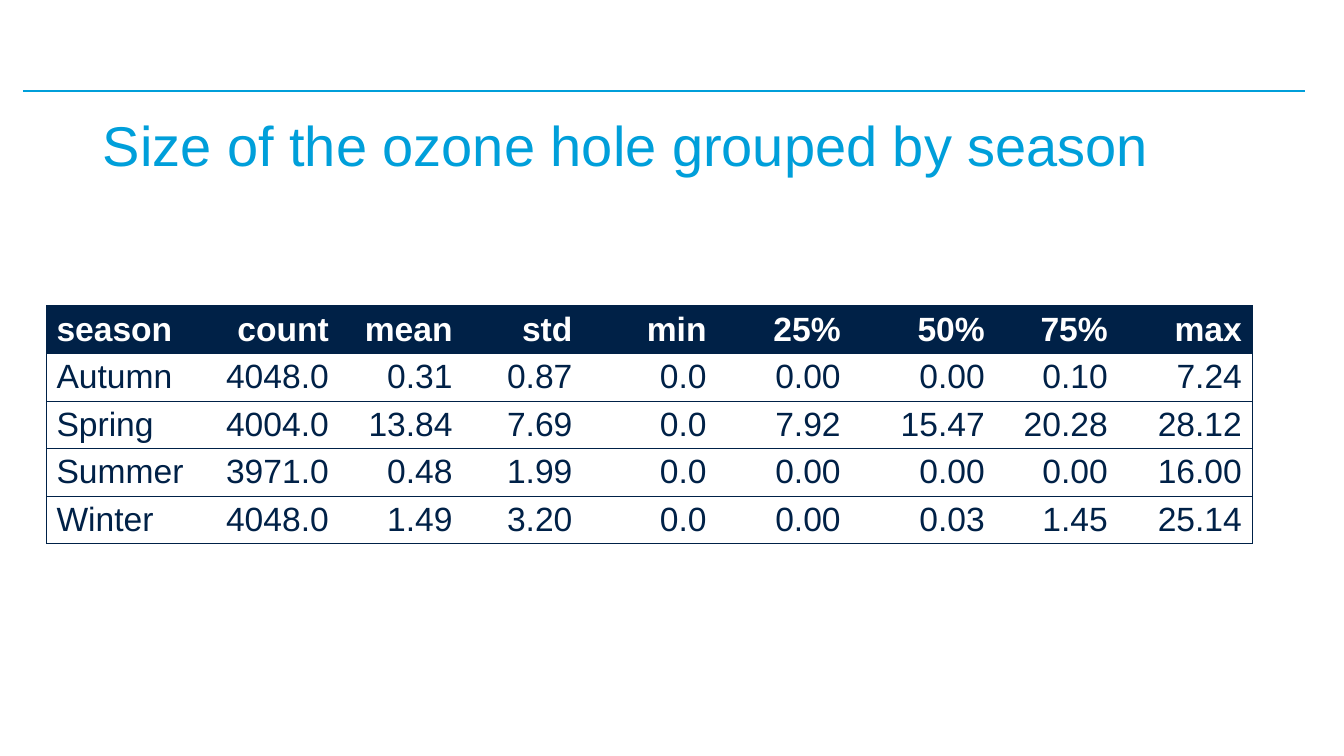
from lxml import etree
from pptx import Presentation
from pptx.dml.color import RGBColor
from pptx.enum import shapes, text
from pptx.oxml import ns
from pptx.util import Cm, Pt

TITLE = "Size of the ozone hole grouped by season"
ROWS = [
    ("season", "count", "mean", "std", "min", "25%", "50%", "75%", "max"),
    ("Autumn", "4048.0", "0.31", "0.87", "0.0", "0.00", "0.00", "0.10", "7.24"),
    ("Spring", "4004.0", "13.84", "7.69", "0.0", "7.92", "15.47", "20.28", "28.12"),
    ("Summer", "3971.0", "0.48", "1.99", "0.0", "0.00", "0.00", "0.00", "16.00"),
    ("Winter", "4048.0", "1.49", "3.20", "0.0", "0.00", "0.03", "1.45", "25.14"),
]
WIDTHS = (3.84, 3.53, 3.12, 3.02, 3.38, 3.38, 3.63, 3.1, 3.38)
HIGH = 1.2
BLUE, NAVY, WHITE = "009FDA", "002147", "FFFFFF"


def color(code):
    return RGBColor.from_string(code)


def write(para, words, size, code, bold=False):
    run = para.add_run()
    run.text = words
    run.font.name = "Arial"
    run.font.size = Pt(size)
    run.font.bold = bold
    run.font.color.rgb = color(code)


def border(cell, side, shown):
    props = cell._tc.get_or_add_tcPr()
    line = etree.SubElement(props, ns.qn("a:ln" + side), w=str(Pt(0.5)))
    if shown:
        fill = etree.SubElement(line, ns.qn("a:solidFill"))
        etree.SubElement(fill, ns.qn("a:srgbClr"), val=NAVY)
    else:
        etree.SubElement(line, ns.qn("a:noFill"))


def add_rule(slide):
    rule = slide.shapes.add_connector(
        shapes.MSO_CONNECTOR.STRAIGHT, Cm(0.58), Cm(2.29), Cm(32.89), Cm(2.29))
    rule.line.color.rgb = color(BLUE)
    rule.line.width = Pt(1.5)
    etree.SubElement(rule._element.spPr, ns.qn("a:effectLst"))


def add_title(slide):
    title = slide.shapes.title
    title.left, title.top = Cm(2.34), Cm(2.77)
    title.width, title.height = Cm(29.21), Cm(1.93)
    frame = title.text_frame
    frame.word_wrap = True
    frame.auto_size = text.MSO_AUTO_SIZE.NONE
    frame.vertical_anchor = text.MSO_ANCHOR.MIDDLE
    para = frame.paragraphs[0]
    para.alignment = text.PP_ALIGN.LEFT
    para.line_spacing = 0.9
    write(para, TITLE, 40, BLUE)


def add_stats(slide):
    last = len(WIDTHS) - 1
    table = slide.shapes.add_table(
        len(ROWS), len(WIDTHS), Cm(1.17), Cm(7.7),
        Cm(sum(WIDTHS)), Cm(HIGH * len(ROWS))).table
    table.horz_banding = False
    for col, width in zip(table.columns, WIDTHS):
        col.width = Cm(width)
    for r, row in enumerate(ROWS):
        table.rows[r].height = Cm(HIGH)
        head = r == 0
        for c, words in enumerate(row):
            cell = table.cell(r, c)
            cell.vertical_anchor = text.MSO_ANCHOR.MIDDLE
            cell.margin_top = cell.margin_bottom = Cm(0.1)
            for side, shown in (("L", c == 0), ("R", c == last), ("T", True), ("B", True)):
                border(cell, side, shown)
            cell.fill.solid()
            cell.fill.fore_color.rgb = color(NAVY if head else WHITE)
            para = cell.text_frame.paragraphs[0]
            para.alignment = text.PP_ALIGN.RIGHT if c else text.PP_ALIGN.LEFT
            write(para, words, 24, WHITE if head else NAVY, head)


def main():
    deck = Presentation()
    deck.slide_width, deck.slide_height = Cm(33.87), Cm(19.05)
    slide = deck.slides.add_slide(deck.slide_layouts[5])
    add_rule(slide)
    add_title(slide)
    add_stats(slide)
    deck.save("out.pptx")


if __name__ == "__main__":
    main()
